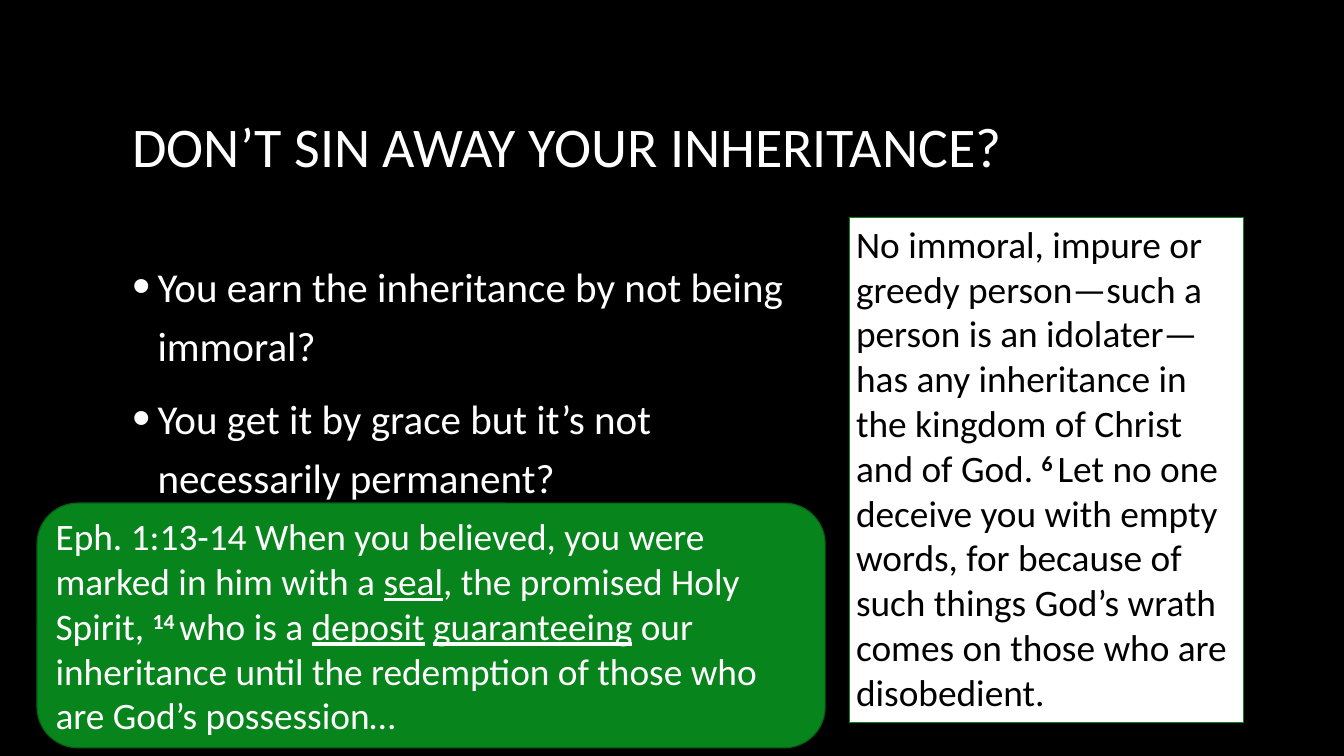
"""Build the slide on whether an inheritance can be sinned away."""
import lxml.etree
import pptx
import pptx.dml.color
import pptx.enum.shapes
import pptx.enum.text
import pptx.oxml.ns
import pptx.util

Cm = pptx.util.Cm
Pt = pptx.util.Pt
BLACK = pptx.dml.color.RGBColor(0x00, 0x00, 0x00)
WHITE = pptx.dml.color.RGBColor(0xFF, 0xFF, 0xFF)
GREEN = pptx.dml.color.RGBColor(0x07, 0x84, 0x1B)
DARK_GREEN = pptx.dml.color.RGBColor(0x05, 0x62, 0x14)
SHAPES = pptx.enum.shapes.MSO_SHAPE
ANCHOR = pptx.enum.text.MSO_ANCHOR
LEFT = pptx.enum.text.PP_ALIGN.LEFT

QUESTIONS = [
    "You earn the inheritance by not being immoral?",
    "You get it by grace but it’s not necessarily permanent?",
]
WARNING = [
    ("No immoral, impure or greedy person—such a person is an idolater—has any "
     "inheritance in the kingdom of Christ and of God. ", ""),
    ("6 ", "verse"),
    ("Let no one deceive you with empty words, for because of such things God’s "
     "wrath comes on those who are disobedient.", ""),
]
PROMISE = [
    ("Eph. 1:13-14 When you believed, you were marked in him with a ", ""),
    ("seal", "underline"),
    (", the promised Holy Spirit, ", ""),
    ("14 ", "verse"),
    ("who is a ", ""),
    ("deposit", "underline"),
    (" ", ""),
    ("guaranteeing", "underline"),
    (" our inheritance until the redemption of those who are God’s possession…", ""),
]


def place(part, left, top, width, height):
    bounds = {"left": left, "top": top, "width": width, "height": height}
    for side, length in bounds.items():
        setattr(part, side, Cm(length))


def write(paragraph, words, size, color, style=""):
    run = paragraph.add_run()
    run.text = words
    run.font.color.rgb = color
    formats = {"name": "Calibri", "size": Pt(size)}
    if style == "underline":
        formats["underline"] = True
    if style == "verse":
        formats["bold"] = True
        run.font._element.set("baseline", "30000")
    for attribute, value in formats.items():
        setattr(run.font, attribute, value)


presentation = pptx.Presentation()
presentation.slide_width = Cm(50.8)
presentation.slide_height = Cm(28.58)
slide = presentation.slides.add_slide(presentation.slide_layouts[1])
slide.background.fill.solid()
slide.background.fill.fore_color.rgb = BLACK

title = slide.shapes.title
place(title, 4.75, 2.57, 41.28, 6.17)
title.text_frame.auto_size = pptx.enum.text.MSO_AUTO_SIZE.NONE
title.text_frame.vertical_anchor = ANCHOR.MIDDLE
heading = title.text_frame.paragraphs[0]
heading.alignment = LEFT
heading.line_spacing = 0.9
write(heading, "DON’T SIN AWAY YOUR INHERITANCE?", 60, WHITE)

body = slide.placeholders[1]
place(body, 4.75, 9.37, 26.49, 14.76)
body.text_frame.auto_size = pptx.enum.text.MSO_AUTO_SIZE.NONE
for index, question in enumerate(QUESTIONS):
    item = body.text_frame.add_paragraph() if index else body.text_frame.paragraphs[0]
    properties = item._p.get_or_add_pPr()
    properties.set("marL", str(Cm(0.95)))
    properties.set("indent", str(-Cm(0.95)))
    for tag, attribute, value in (
        ("a:buSzPct", "val", "125000"),
        ("a:buFont", "typeface", "Arial"),
        ("a:buChar", "char", "•"),
    ):
        bullet = lxml.etree.SubElement(properties, pptx.oxml.ns.qn(tag))
        bullet.set(attribute, value)
    item.line_spacing = 1.2
    item.space_before = Pt(15 if index else 0)
    write(item, question, 44, WHITE)

for kind, bounds, fill, outline, color, anchor, passage in (
    (SHAPES.RECTANGLE, (32.11, 8.23, 14.88, 19.1),
     WHITE, GREEN, BLACK, ANCHOR.TOP, WARNING),
    (SHAPES.ROUNDED_RECTANGLE, (1.4, 19.02, 29.79, 9.25),
     GREEN, DARK_GREEN, WHITE, ANCHOR.MIDDLE, PROMISE),
):
    panel = slide.shapes.add_shape(kind, *map(Cm, bounds))
    panel.shadow.inherit = False
    panel.fill.solid()
    panel.fill.fore_color.rgb = fill
    panel.line.color.rgb = outline
    panel.line.width = Pt(1.25)
    panel.text_frame.word_wrap = True
    panel.text_frame.vertical_anchor = anchor
    verse = panel.text_frame.paragraphs[0]
    verse.alignment = LEFT
    for words, style in passage:
        write(verse, words, 40, color, style)

presentation.save("out.pptx")
